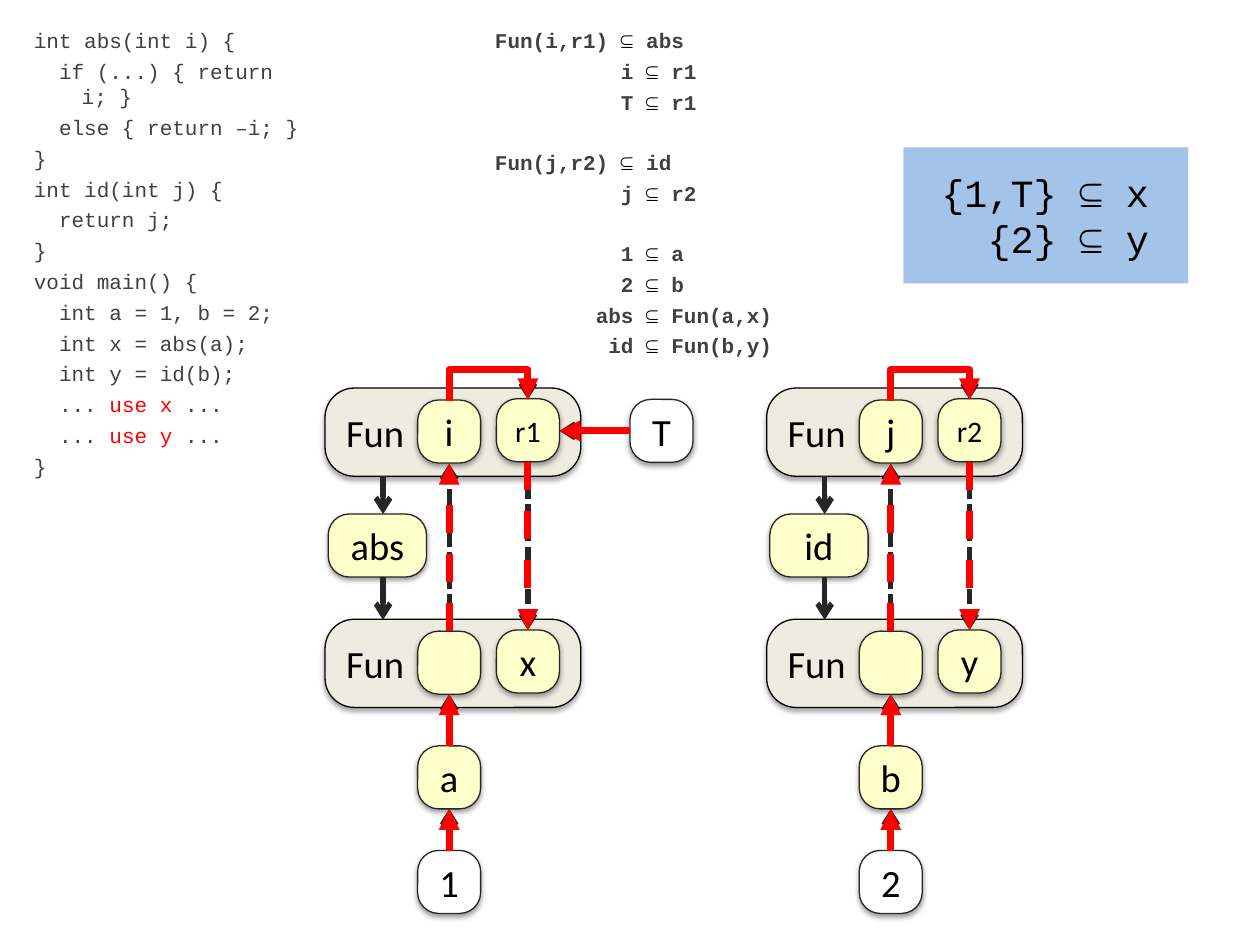
from lxml import etree
from pptx import Presentation
from pptx.dml.color import RGBColor
from pptx.enum.dml import MSO_LINE_DASH_STYLE as DASH
from pptx.enum.shapes import MSO_CONNECTOR as CONN, MSO_SHAPE as SHAPE
from pptx.enum.text import MSO_ANCHOR as ANCHOR, PP_ALIGN as ALIGN
from pptx.oxml.ns import qn
from pptx.util import Inches, Pt

INK, GREY, RED = "262626", "404040", "FF0000"
CREAM, STONE, WHITE, BLACK = "FFFFCA", "EEECE1", "FFFFFF", "000000"
CHAR = 0.1
HANG = 0.38
NODE = 0.5
BLACK_EDGE = dict(color=INK, width=3, head="arrow", dash=DASH.SQUARE_DOT)
RED_EDGE = dict(color=RED, width=4, head="triangle", dash=DASH.DASH)

CODE = [
    (0, "int abs(int i) {", ""),
    (2, "if (...) { return i; }", ""),
    (2, "else { return –i; }", ""),
    (0, "}", ""),
    (0, "int id(int j) {", ""),
    (2, "return j;", ""),
    (0, "}", ""),
    (0, "void main() {", ""),
    (2, "int a = 1, b = 2;", ""),
    (2, "int x = abs(a);", ""),
    (2, "int y = id(b);", ""),
    (2, "... use x ...", "use x"),
    (2, "... use y ...", "use y"),
    (0, "}", ""),
]
CONSTRAINTS = [
    (0, "Fun(i,r1) ⊆ abs", 0),
    (10, "i ⊆ r1", 0),
    (10, "T ⊆ r1", 0),
    (0, "Fun(j,r2) ⊆ id", 1),
    (10, "j ⊆ r2", 0),
    (10, "1 ⊆ a", 1),
    (10, "2 ⊆ b", 0),
    (8, "abs ⊆ Fun(a,x)", 0),
    (9, "id ⊆ Fun(b,y)", 0),
]


def rgb(value):
    """Turn a hex string into a colour."""
    return RGBColor.from_string(value)


def add_run(p, text, color=BLACK, **font):
    """Append one run with the given font values."""
    r = p.add_run()
    r.text = text
    r.font.color.rgb = rgb(color)
    for name, value in font.items():
        setattr(r.font, name, value)


def add_mono(p, text, token, base, accent):
    """Write a monospaced line in which the token has its own format."""
    head, mark, tail = text.partition(token) if token else (text, "", "")
    for part, look in ((head, base), (mark, accent), (tail, base)):
        if part:
            add_run(p, part, name="Courier New", size=Pt(12), **look)


def add_listing(s, box, lines, base, accent):
    """Place lines of (indent, text, token, gap) in a text box."""
    tf = s.shapes.add_textbox(*map(Inches, box)).text_frame
    tf.word_wrap = True
    for i, (lead, text, token, gap) in enumerate(lines):
        p = tf.paragraphs[0] if i == 0 else tf.add_paragraph()
        p.space_before = Pt(3.2 + 16.8 * gap)
        pPr = p._p.get_or_add_pPr()
        pPr.set("marL", str(Inches(HANG)))
        pPr.set("indent", str(Inches(lead * CHAR - HANG)))
        add_mono(p, text, token, base, accent)


def add_code(s, box):
    """Place the program listing."""
    lines = [(*row, 0) for row in CODE]
    add_listing(s, box, lines, dict(color=GREY), dict(color=RED))


def add_constraints(s, box):
    """Place the list of inclusion constraints."""
    lines = [(lead, text, "⊆", gap) for lead, text, gap in CONSTRAINTS]
    add_listing(s, box, lines, dict(color=GREY, bold=True), dict(color=BLACK))


def add_solution(s, box):
    """Place the panel with the solved sets, aligned on the right."""
    sp = s.shapes.add_shape(SHAPE.RECTANGLE, *map(Inches, box))
    sp.shadow.inherit = False
    sp.fill.solid()
    sp.fill.fore_color.rgb = rgb("8EB4E3")
    color = sp._element.spPr.find(qn("a:solidFill"))[0]
    etree.SubElement(color, qn("a:alpha"), val="80000")
    sp.line.fill.background()
    tf = sp.text_frame
    tf.vertical_anchor = ANCHOR.MIDDLE
    tf.margin_right = Inches(0.31)
    for p, text in zip((tf.paragraphs[0], tf.add_paragraph()), ("{1,T} ⊆ x", "{2} ⊆ y")):
        p.alignment = ALIGN.RIGHT
        add_run(p, text, name="Courier New", size=Pt(22))


def add_shadow(sp, alpha, dist):
    """Give a shape a soft shadow straight below it."""
    sp.shadow.inherit = False
    effects = sp._element.spPr.find(qn("a:effectLst"))
    shadow = etree.SubElement(effects, qn("a:outerShdw"), blurRad=str(Pt(3.1)),
                              dist=str(Pt(dist)), dir="5400000", rotWithShape="0")
    color = etree.SubElement(shadow, qn("a:srgbClr"), val=BLACK)
    etree.SubElement(color, qn("a:alpha"), val=str(alpha * 1000))


def add_box(s, box, fill, line, alpha, dist):
    """Add a rounded box with a thin outline and a shadow."""
    sp = s.shapes.add_shape(SHAPE.ROUNDED_RECTANGLE, *map(Inches, box))
    sp.adjustments[0] = 0.333
    sp.fill.solid()
    sp.fill.fore_color.rgb = rgb(fill)
    sp.line.color.rgb = rgb(line)
    sp.line.width = Pt(0.75)
    add_shadow(sp, alpha, dist)
    sp.text_frame.vertical_anchor = ANCHOR.MIDDLE
    return sp


def add_node(s, x, y, text, fill=CREAM, width=NODE):
    """Add a graph node with a centred label."""
    tf = add_box(s, (x, y, width, NODE), fill, INK, 38, 1.6).text_frame
    tf.margin_left = tf.margin_right = 0
    if text:
        p = tf.paragraphs[0]
        p.alignment = ALIGN.CENTER
        size = 17 if text.startswith("r") else 22
        add_run(p, text, name="Calibri", size=Pt(size))


def add_fun(s, x, y, arg, result):
    """Add a Fun term with its argument and result nodes."""
    sp = add_box(s, (x, y, 2.03, 0.7), STONE, BLACK, 35, 1.8)
    p = sp.text_frame.paragraphs[0]
    p.alignment = ALIGN.LEFT
    add_run(p, "Fun", name="Calibri", size=Pt(22))
    add_node(s, x + 0.735, y + 0.095, arg)
    add_node(s, x + 1.36, y + 0.085, result)


def add_edge(s, points, color, width, head, dash=None, kind=CONN.STRAIGHT):
    """Add an arrow from the first point to the second."""
    c = s.shapes.add_connector(kind, *map(Inches, points))
    c.line.color.rgb = rgb(color)
    c.line.width = Pt(width)
    if dash:
        c.line.dash_style = dash
    etree.SubElement(c.line._get_or_add_ln(), qn("a:tailEnd"), type=head)
    etree.SubElement(c._element.spPr, qn("a:effectLst"))
    return c


def add_bend(s, x, y, span, look):
    """Add an elbow arrow that rises over the given span."""
    mid = x + span / 2
    points = (mid + 0.005, y + span / 2, mid - 0.005, y - span / 2)
    c = add_edge(s, points, **{**look, "dash": None}, kind=CONN.ELBOW)
    spPr = c._element.spPr
    spPr.find(qn("a:xfrm")).set("rot", "5400000")
    guides = spPr.find(qn("a:prstGeom")).find(qn("a:avLst"))
    etree.SubElement(guides, qn("a:gd"), name="adj1", fmla="val 2500000")


def add_flow(s, x, y, look):
    """Add the arrows along which values flow through one graph."""
    arg, result = x + 0.985, x + 1.61
    solid = {**look, "dash": None}
    add_edge(s, (arg, y + 3.67, arg, y + 3.34), **solid)
    add_edge(s, (arg, y + 2.84, arg, y + 2.43), **solid)
    add_edge(s, (arg, y + 1.93, arg, y + 0.6), **look)
    add_edge(s, (result, y + 0.59, result, y + 1.92), **look)
    add_bend(s, arg, y + 0.095, result - arg, look)


def add_graph(s, x, y, arg, result, func, target, source, value):
    """Add the nodes and plain arrows of one call graph."""
    add_fun(s, x, y, arg, result)
    add_fun(s, x, y + 1.835, "", target)
    add_node(s, x + 0.025, y + 1, func, width=0.78)
    add_node(s, x + 0.735, y + 2.84, source)
    add_node(s, x + 0.735, y + 3.67, value, WHITE)
    for top, bottom in ((0.7, 1), (1.5, 1.84)):
        add_edge(s, (x + 0.46, y + top, x + 0.46, y + bottom), INK, 3, "arrow")
    add_flow(s, x, y, BLACK_EDGE)


def main():
    """Build the slide and save it."""
    prs = Presentation()
    prs.slide_width, prs.slide_height = Inches(10), Inches(7.5)
    s = prs.slides.add_slide(prs.slide_layouts[6])
    add_code(s, (0.17, 0.17, 2.58, 3.58))
    add_constraints(s, (3.83, 0.17, 3.75, 2.84))
    left, right, top = 2.58, 6.085, 3.08
    add_graph(s, right, top, "j", "r2", "id", "y", "b", "2")
    add_graph(s, left, top, "i", "r1", "abs", "x", "a", "1")
    add_node(s, 5, 3.17, "T", WHITE)
    add_solution(s, (7.17, 1.17, 2.26, 1.08))
    for look in (BLACK_EDGE, RED_EDGE):
        add_edge(s, (5, 3.42, 4.44, 3.42), **{**look, "dash": None})
    for x in (left, right):
        add_flow(s, x, top, RED_EDGE)
    prs.save("out.pptx")


if __name__ == "__main__":
    main()
